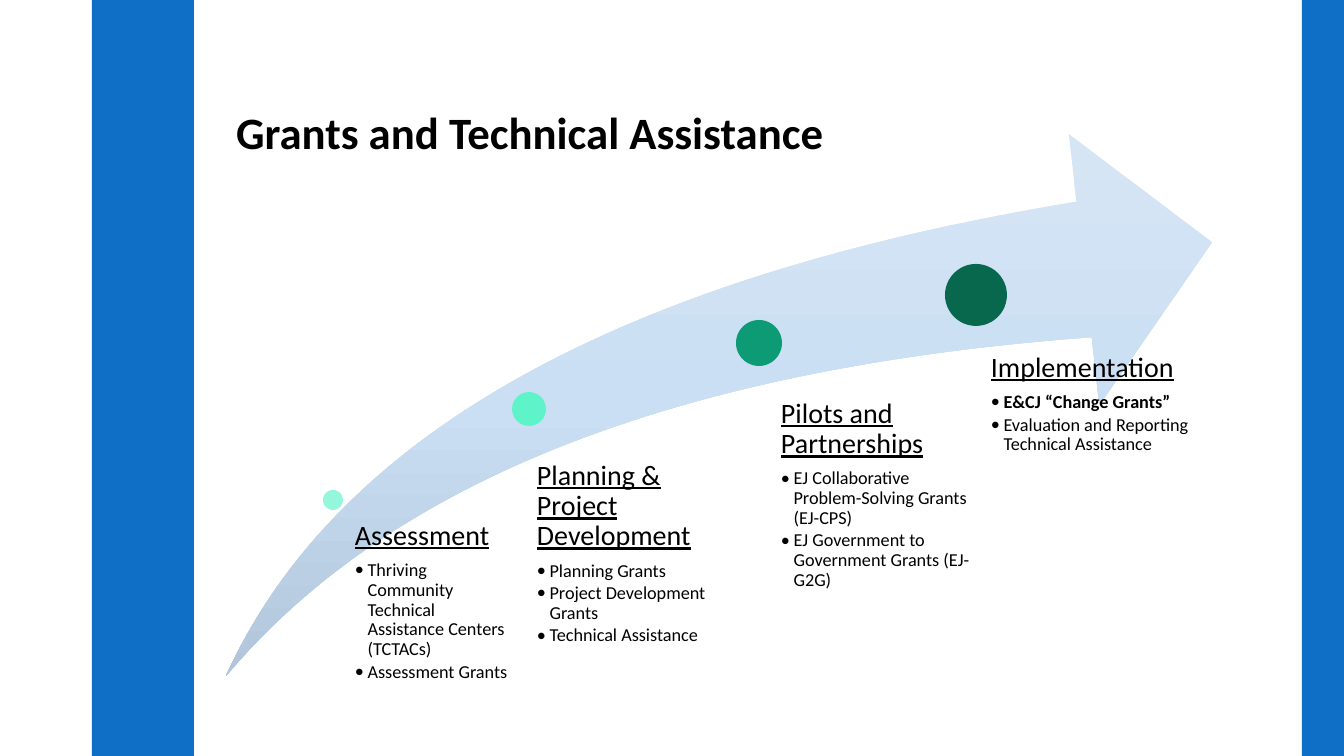
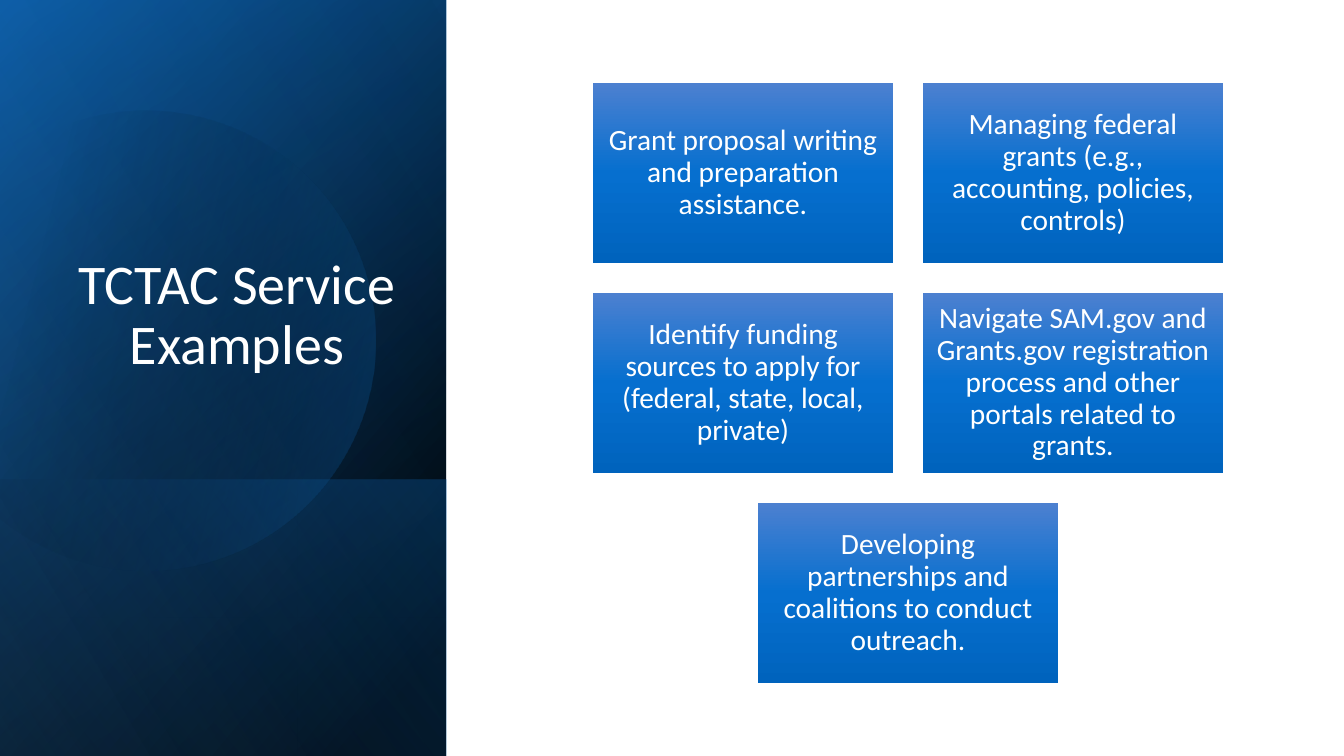
import math

from lxml import etree
from pptx import Presentation
from pptx import util as u
from pptx.dml import color as dml
from pptx.enum import shapes, text
from pptx.oxml import ns

PX = 914400 / 100.8
WIDTH, HEIGHT = 1344, 756
COLORS = {
    "black": "000000", "white": "FFFFFF", "band": "0F6FC6",
    "navy": "0B5394", "sky": "59AAF2",
    "swoosh_top": "D6E5F4", "swoosh_mid": "CADFF3", "swoosh_end": "B1C6DB",
    "tile_top": "4C80D0", "tile_mid": "066FCF", "tile_end": "0063BD",
    "mint": "94F7DC", "aqua": "5FF3CA", "green": "0C9B74", "forest": "08684E",
}
FORMATS = {
    "title": {"size": u.Pt(32), "bold": True},
    "panel_title": {"size": u.Pt(40)},
    "stage": {"size": u.Pt(20), "underline": True},
    "item": {"size": u.Pt(13)},
    "key_item": {"size": u.Pt(13), "bold": True},
    "tile": {"size": u.Pt(21)},
}
SPACE_AFTER = {"stage": u.Pt(7), "item": u.Pt(2), "key_item": u.Pt(2)}


def paint(shape, stops, angle=None):
    shape.shadow.inherit = False
    shape.line.fill.background()
    if angle is None:
        shape.fill.solid()
        shape.fill.fore_color.rgb = dml.RGBColor.from_string(COLORS[stops])
        return
    shape.fill.gradient()
    gradient = shape._element.spPr.find(ns.qn("a:gradFill"))
    for child in list(gradient):
        gradient.remove(child)
    gradient.set("rotWithShape", "1")
    stop_list = etree.SubElement(gradient, ns.qn("a:gsLst"))
    for position, name, opacity in stops:
        stop = etree.SubElement(stop_list, ns.qn("a:gs"), pos=str(position * 1000))
        rgb = etree.SubElement(stop, ns.qn("a:srgbClr"), val=COLORS[name])
        if opacity < 100:
            etree.SubElement(rgb, ns.qn("a:alpha"), val=str(opacity * 1000))
    etree.SubElement(gradient, ns.qn("a:lin"), ang=str(angle * 60000), scaled="0")


def write(shape, lines, insets, anchor="TOP", align="LEFT", color="black"):
    frame = shape.text_frame
    frame.word_wrap = True
    frame.vertical_anchor = getattr(text.MSO_ANCHOR, anchor)
    for side, inset in zip(("left", "top", "right", "bottom"), insets):
        setattr(frame, f"margin_{side}", u.Emu(round(inset * PX)))
    for index, (style, words) in enumerate(lines):
        paragraph = frame.add_paragraph() if index else frame.paragraphs[0]
        paragraph.alignment = getattr(text.PP_ALIGN, align)
        paragraph.line_spacing = 0.9
        if style in SPACE_AFTER:
            paragraph.space_after = SPACE_AFTER[style]
        if style.endswith("item"):
            properties = paragraph._p.get_or_add_pPr()
            properties.set("marL", str(u.Pt(9)))
            properties.set("indent", str(-u.Pt(9)))
            etree.SubElement(properties, ns.qn("a:buFont"), typeface="Calibri")
            etree.SubElement(properties, ns.qn("a:buChar"), char="•")
        run = paragraph.add_run()
        run.text = words
        run.font.color.rgb = dml.RGBColor.from_string(COLORS[color])
        for font in (paragraph.font, run.font):
            font.name = "Calibri"
            for attribute, value in FORMATS[style].items():
                setattr(font, attribute, value)


deck = Presentation()
deck.slide_width = u.Emu(round(WIDTH * PX))
deck.slide_height = u.Emu(round(HEIGHT * PX))
blank = deck.slide_layouts[6]
for placeholder in list(blank.placeholders):
    blank.shapes._spTree.remove(placeholder._element)

grants = deck.slides.add_slide(blank).shapes
bands = []
for left, width in ((92, 102), (1302, 42)):
    band = grants.add_shape(shapes.MSO_SHAPE.RECTANGLE,
                            *(round(n * PX) for n in (left, 0, width, HEIGHT)))
    paint(band, "band")
    bands.append(band)
for band in bands:
    blank.shapes._spTree.append(band._element)

swoosh = grants.add_shape(shapes.MSO_SHAPE.SWOOSH_ARROW,
                          *(round(n * PX) for n in (226, 134, 986, 542)))
swoosh.adjustments[0] = swoosh.adjustments[1] = 0.25
paint(swoosh, [(0, "swoosh_top", 100), (50, "swoosh_mid", 100), (100, "swoosh_end", 100)], 90)

stages = [
    ("mint", (323, 490, 20), (345, 521, 164, 129), 10, [
        ("stage", "Assessment"),
        ("item", "Thriving Community Technical Assistance Centers (TCTACs)"),
        ("item", "Assessment Grants")]),
    ("aqua", (512, 392, 34), (519, 461, 225, 127), 18, [
        ("stage", "Planning & Project Development"),
        ("item", "Planning Grants"),
        ("item", "Project Development Grants"),
        ("item", "Technical Assistance")]),
    ("green", (736, 320, 46), (757, 399, 223, 155), 24, [
        ("stage", "Pilots and Partnerships"),
        ("item", "EJ Collaborative Problem-Solving Grants (EJ-CPS)"),
        ("item", "EJ Government to Government Grants (EJ-G2G)")]),
    ("forest", (945, 264, 62), (959, 353, 232, 182), 32, [
        ("stage", "Implementation"),
        ("key_item", "E&CJ “Change Grants”"),
        ("item", "Evaluation and Reporting Technical Assistance")]),
]
for color, (left, top, size), area, inset, lines in stages:
    dot = grants.add_shape(shapes.MSO_SHAPE.OVAL,
                           *(round(n * PX) for n in (left, top, size, size)))
    paint(dot, color)
    description = grants.add_textbox(*(round(n * PX) for n in area))
    write(description, lines, (inset, 0, 0, 0))

heading = grants.add_textbox(*(round(n * PX) for n in (226, 79, 1117, 111)))
write(heading, [("title", "Grants and Technical Assistance")], (10, 5, 10, 5), "MIDDLE")

services = deck.slides.add_slide(blank).shapes
backdrop = services.add_shape(shapes.MSO_SHAPE.RECTANGLE, 0, 0, deck.slide_width, deck.slide_height)
paint(backdrop, "white")

PANEL = 446
RADIUS, CENTER_X, CENTER_Y = 230, 145, 336
panel_layers = [
    (HEIGHT, [(8, "black", 100), (100, "navy", 100)], 50),
    (HEIGHT, [(0, "black", 0), (99, "band", 46)], 30),
    (276, [(2, "band", 29), (100, "black", 30)], 130),
    ("disc", [(29, "black", 0), (100, "band", 43)], 30),
    (HEIGHT, [(0, "black", 0), (99, "sky", 11)], 120),
]
for extent, stops, angle in panel_layers:
    if extent == "disc":
        turns = [math.radians(a) for a in (-118, -90, 0, 90, 150)]
        rim = [(CENTER_X + RADIUS * math.cos(t), CENTER_Y + RADIUS * math.sin(t)) for t in turns]
        outline = services.build_freeform(*rim[0], scale=PX)
        outline.add_line_segments(rim[1:], close=True)
        layer = outline.convert_to_shape()
        layer.rotation = 343.9
        origin_x, origin_y = (min(values) for values in zip(*rim))
        segments = list(layer._element.spPr.iter(ns.qn("a:lnTo")))
        for segment, start, end, (x1, y1), (x2, y2) in zip(
                segments, turns, turns[1:], rim, rim[1:]):
            reach = RADIUS * 4 / 3 * math.tan((end - start) / 4)
            curve = etree.Element(ns.qn("a:cubicBezTo"))
            for x, y in ((x1 - reach * math.sin(start), y1 + reach * math.cos(start)),
                         (x2 + reach * math.sin(end), y2 - reach * math.cos(end)),
                         (x2, y2)):
                etree.SubElement(curve, ns.qn("a:pt"),
                                 x=str(round(x - origin_x)), y=str(round(y - origin_y)))
            segment.getparent().replace(segment, curve)
    else:
        area = ((PANEL - extent) / 2, HEIGHT - (extent + PANEL) / 2, extent, PANEL)
        layer = services.add_shape(shapes.MSO_SHAPE.RECTANGLE, *(round(n * PX) for n in area))
        layer.rotation = 90
        layer._element.spPr.find(ns.qn("a:xfrm")).set("flipH", "1")
    paint(layer, stops, angle)

panel_title = services.add_textbox(*(round(n * PX) for n in (65, 185, 344, 264)))
write(panel_title, [("panel_title", "TCTAC Service Examples")], (10, 5, 10, 72),
      "BOTTOM", "CENTER", "white")

TILE_W, TILE_H, GAP = 300, 180, 30
service_rows = [
    ["Grant proposal writing and preparation assistance.",
     "Managing federal grants (e.g., accounting, policies, controls)"],
    ["Identify funding sources to apply for (federal, state, local, private)",
     "Navigate SAM.gov and Grants.gov registration process and other portals related to grants."],
    ["Developing partnerships and coalitions to conduct outreach."],
]
for row, examples in enumerate(service_rows):
    row_width = len(examples) * (TILE_W + GAP) - GAP
    for column, example in enumerate(examples):
        area = (908 - row_width / 2 + column * (TILE_W + GAP),
                83 + row * (TILE_H + GAP), TILE_W, TILE_H)
        tile = services.add_shape(shapes.MSO_SHAPE.RECTANGLE, *(round(n * PX) for n in area))
        paint(tile, [(0, "tile_top", 100), (50, "tile_mid", 100), (100, "tile_end", 100)], 90)
        write(tile, [("tile", example)], (9, 9, 9, 9), "MIDDLE", "CENTER", "white")

deck.save("out.pptx")
